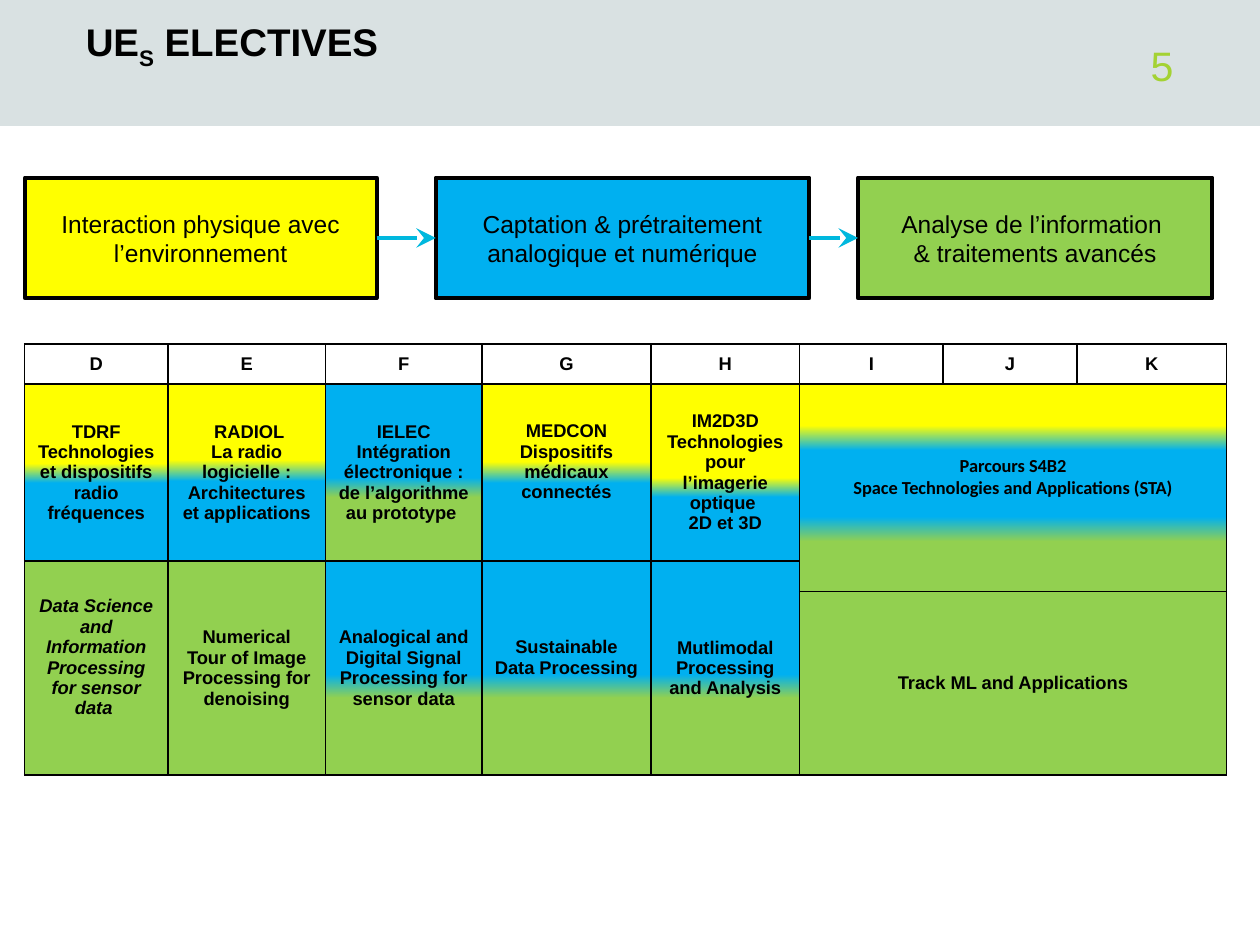
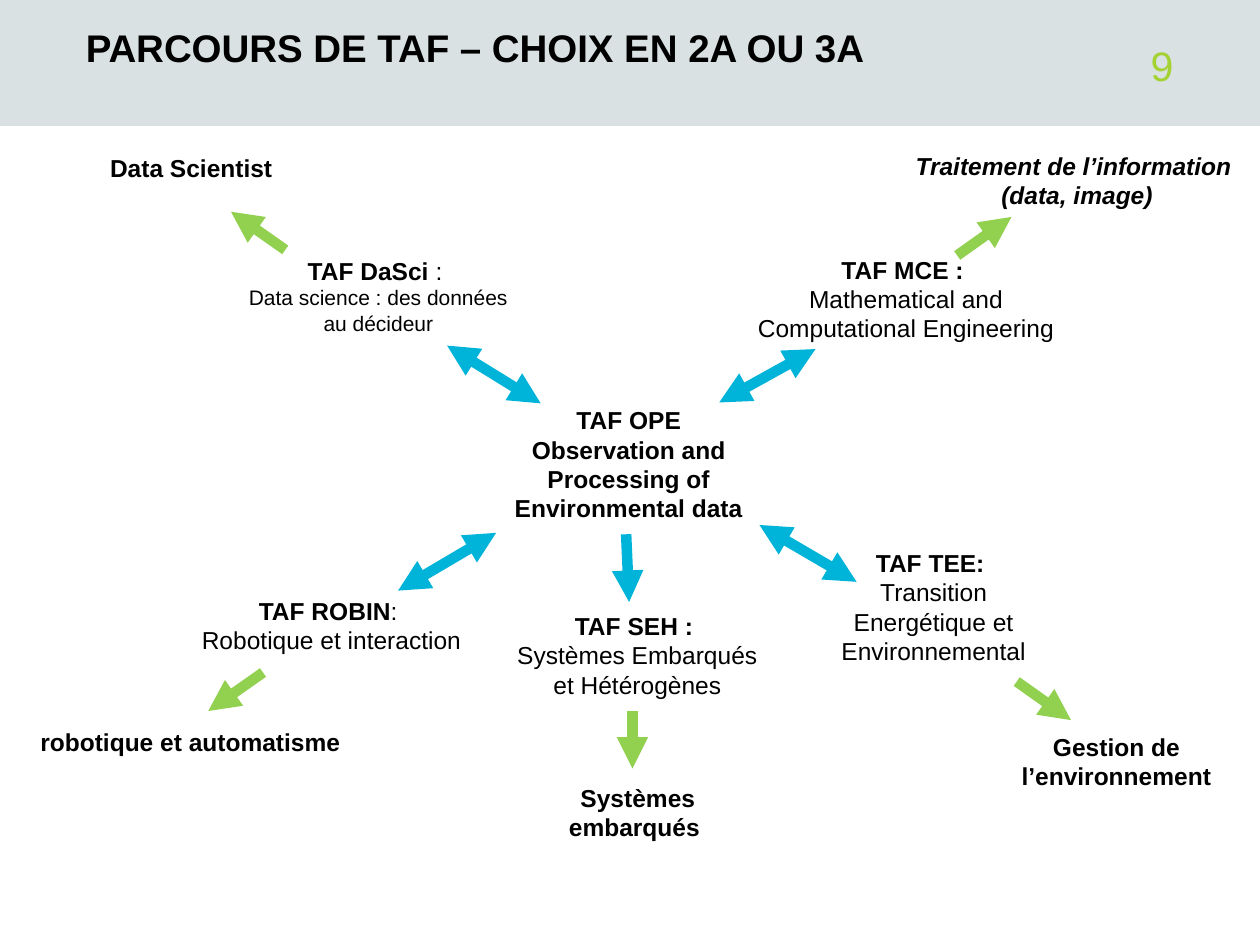
from dataclasses import dataclass
from itertools import pairwise

from lxml.etree import SubElement
from pptx import Presentation
from pptx.dml.color import RGBColor
from pptx.enum.shapes import MSO_CONNECTOR as Connector, MSO_SHAPE as Preset
from pptx.enum.text import MSO_ANCHOR as Anchor, MSO_AUTO_SIZE as AutoSize, PP_ALIGN as Align
from pptx.oxml.ns import qn
from pptx.util import Pt

# Shared colours
BLACK, WHITE, BAND, LIME = "000000", "FFFFFF", "D9E1E2", "A4D233"
YELLOW, BLUE, GREEN = "FFFF00", "00B0F0", "92D050"
FLOW_BLUE, LINK_BLUE = "00B8DE", "00B4D9"


@dataclass(frozen=True)
class Run:
    text: str
    bold: bool = False
    italic: bool = False
    size: float = 14
    face: str = "Arial"
    color: str = BLACK
    baseline: int = 0


Paragraphs = list[list[Run]]


@dataclass(frozen=True)
class Box:
    left: float
    top: float
    width: float
    height: float

    def points(self) -> list:
        return [Pt(value) for value in (self.left, self.top, self.width, self.height)]


@dataclass(frozen=True)
class Stage:
    box: Box
    fill: str
    lines: tuple


@dataclass(frozen=True)
class Course:
    """A table cell: its colours blend from top to bottom at the given edges."""
    row: int
    column: int
    lines: tuple
    colors: tuple = (GREEN,)
    edges: tuple = ()
    span: tuple = (1, 1)
    italic: bool = False
    face: str = "Arial"
    lift: float = 0


@dataclass(frozen=True)
class Label:
    box: Box
    paragraphs: Paragraphs
    wrap: bool = True
    align: Align = Align.CENTER


@dataclass(frozen=True)
class Arrow:
    start: tuple
    end: tuple
    color: str
    double: bool = False
    width: float = 6
    head: str = "triangle"
    head_size: str = "med"


def rgb(value: str) -> RGBColor:
    return RGBColor.from_string(value)


def assign(target, formats: dict) -> None:
    for name, value in formats.items():
        setattr(target, name, value)


def bold(text: str, italic: bool = False) -> Run:
    return Run(text, bold=True, italic=italic)


# Drawing functions
def write_text(frame, paragraphs: Paragraphs, align: Align) -> None:
    for index, runs in enumerate(paragraphs):
        paragraph = frame.add_paragraph() if index else frame.paragraphs[0]
        paragraph.alignment = align
        for item in runs:
            run = paragraph.add_run()
            run.text = item.text
            assign(run.font, {"name": item.face, "size": Pt(item.size),
                              "bold": item.bold, "italic": item.italic})
            run.font.color.rgb = rgb(item.color)
            if item.baseline:
                run.font._element.set("baseline", str(item.baseline * 1000))


def format_frame(frame, anchor: Anchor, **extra) -> None:
    margins = {f"margin_{side}": 0 for side in ("left", "top", "right", "bottom")}
    assign(frame, {"word_wrap": True, "auto_size": AutoSize.NONE,
                   "vertical_anchor": anchor, **margins, **extra})


def add_rectangle(slide, box: Box, fill: str, outline: float = 0):
    shape = slide.shapes.add_shape(Preset.RECTANGLE, *box.points())
    shape.shadow.inherit = False
    shape.fill.solid()
    shape.fill.fore_color.rgb = rgb(fill)
    if outline:
        shape.line.color.rgb = rgb(BLACK)
        shape.line.width = Pt(outline)
    else:
        shape.line.fill.background()
    return shape


def add_page(presentation, title: list[Run], number: int):
    slide = presentation.slides.add_slide(presentation.slide_layouts[5])
    heading = slide.shapes.title
    band = add_rectangle(slide, Box(0, 0, 720, 72), BAND)
    heading.element.addprevious(band.element)
    assign(heading, dict(zip(("left", "top", "width", "height"),
                             Box(49, 0, 552, 40.3).points())))
    format_frame(heading.text_frame, Anchor.BOTTOM)
    write_text(heading.text_frame, [title], Align.LEFT)
    frame = slide.shapes.add_textbox(*Box(619, 21, 51.5, 32).points()).text_frame
    format_frame(frame, Anchor.MIDDLE)
    write_text(frame, [[Run(str(number), size=23.5, color=LIME)]], Align.RIGHT)
    return slide


def add_arrow(slide, arrow: Arrow) -> None:
    ends = [Pt(value) for value in (*arrow.start, *arrow.end)]
    line = slide.shapes.add_connector(Connector.STRAIGHT, *ends)
    line.line.color.rgb = rgb(arrow.color)
    line.line.width = Pt(arrow.width)
    outline = line.line._get_or_add_ln()
    for tag in ["a:headEnd"] * arrow.double + ["a:tailEnd"]:
        SubElement(outline, qn(tag), type=arrow.head, w=arrow.head_size, len=arrow.head_size)
    SubElement(line.element.spPr, qn("a:effectLst"))


def add_label(slide, label: Label) -> None:
    frame = slide.shapes.add_textbox(*label.box.points()).text_frame
    assign(frame, {"word_wrap": label.wrap, "auto_size": AutoSize.SHAPE_TO_FIT_TEXT})
    write_text(frame, label.paragraphs, label.align)


def add_color(parent, color: str) -> None:
    SubElement(parent, qn("a:srgbClr"), val=color)


def paint_cell(cell, colors: tuple, edges: tuple) -> None:
    properties = cell._tc.get_or_add_tcPr()
    for side in "LRTB":
        border = SubElement(properties, qn(f"a:ln{side}"), w=str(Pt(1)))
        add_color(SubElement(border, qn("a:solidFill")), BLACK)
    if not edges:
        add_color(SubElement(properties, qn("a:solidFill")), colors[0])
        return
    stops = [(0, colors[0])]
    for (start, end), (upper, lower) in zip(edges, pairwise(colors)):
        stops += [(start, upper), (end, lower)]
    gradient = SubElement(properties, qn("a:gradFill"), rotWithShape="1")
    stop_list = SubElement(gradient, qn("a:gsLst"))
    for position, color in stops + [(100, colors[-1])]:
        add_color(SubElement(stop_list, qn("a:gs"), pos=str(position * 1000)), color)
    SubElement(gradient, qn("a:lin"), ang="5400000", scaled="0")


def add_course_table(slide, courses: list[Course]) -> None:
    widths = (82, 90, 89.5, 96.5, 85, 82, 76.5, 85.5)
    heights = (23, 101, 17.5, 105)
    box = Box(14, 196.5, sum(widths), sum(heights))
    table = slide.shapes.add_table(len(heights), len(widths), *box.points()).table
    assign(table, {"first_row": False, "horz_banding": False})
    for column, width in zip(table.columns, widths):
        column.width = Pt(width)
    for row, height in zip(table.rows, heights):
        row.height = Pt(height)
    for course in courses:
        rows, columns = course.span
        cell = table.cell(course.row, course.column)
        if course.span != (1, 1):
            cell.merge(table.cell(course.row + rows - 1, course.column + columns - 1))
        for row in range(course.row, course.row + rows):
            for column in range(course.column, course.column + columns):
                paint_cell(table.cell(row, column), course.colors, course.edges)
        assign(cell, {"vertical_anchor": Anchor.MIDDLE, "margin_bottom": Pt(3.6 + course.lift)})
        write_text(cell.text_frame,
                   [[Run(line, True, course.italic, 10.5, course.face)] for line in course.lines],
                   Align.CENTER)


# Slide 1: processing chain and elective courses
STAGES = [
    Stage(Box(14.2, 101.5, 201, 69), YELLOW, ("Interaction physique avec l’environnement",)),
    Stage(Box(249, 101.5, 213.5, 69), BLUE,
          ("Captation & prétraitement analogique et numérique",)),
    Stage(Box(490.3, 101.5, 202.5, 69), GREEN,
          ("Analyse de l’information ", "& traitements avancés")),
]
SKY, FIELD = (YELLOW, BLUE), (BLUE, GREEN)
LOW_EDGE = ((53, 64),)
COURSES = [Course(0, column, (letter,), (WHITE,)) for column, letter in enumerate("DEFGHIJK")] + [
    Course(1, 0, ("TDRF Technologies et dispositifs radio fréquences",), SKY, ((45, 56),)),
    Course(1, 1, (" RADIOL", "La radio logicielle : Architectures et applications "),
           SKY, ((43, 55),)),
    Course(1, 2, ("IELEC", "Intégration électronique : de l’algorithme au prototype "),
           FIELD, LOW_EDGE),
    Course(1, 3, ("MEDCON", "Dispositifs médicaux connectés"), SKY, ((44, 56),), lift=12),
    Course(1, 4, ("IM2D3D", "Technologies pour l’imagerie optique ", "2D et 3D"),
           SKY, LOW_EDGE),
    Course(1, 5, ("Parcours S4B2", "Space Technologies and Applications (STA)"),
           (YELLOW, BLUE, GREEN), ((20, 32), (64, 76)), (2, 3), face="Calibri", lift=12),
    Course(2, 0, ("Data Science and Information Processing for sensor data ",),
           span=(2, 1), italic=True, lift=12),
    Course(2, 1, ("Numerical Tour of Image Processing for denoising",), span=(2, 1)),
    Course(2, 2, ("Analogical and Digital Signal Processing for sensor data",),
           FIELD, LOW_EDGE, (2, 1)),
    Course(2, 3, ("Sustainable Data Processing",), FIELD, LOW_EDGE, (2, 1), lift=12),
    Course(2, 4, ("Mutlimodal Processing and Analysis",), FIELD, LOW_EDGE, (2, 1)),
    Course(3, 5, ("Track ML and Applications",), span=(1, 3)),
]

# Slide 2: programme map
LABELS = [
    Label(Box(277, 228, 164.5, 75),
          [[bold("TAF OPE")], [bold("Observation and Processing of Environmental data")]]),
    Label(Box(134.5, 142.5, 163.5, 53),
          [[bold("TAF DaSci "), Run(": ")],
           [Run("Data science : des données au décideur", size=12)]]),
    Label(Box(422, 142, 191.5, 58),
          [[bold("TAF MCE : ")], [Run("Mathematical and Computational Engineering")]]),
    Label(Box(94, 337, 191, 41),
          [[bold("TAF ROBIN"), Run(": ")], [Run("Robotique et interaction")]]),
    Label(Box(55.5, 83.8, 111.5, 24.5), [[bold("Data Scientist ")]], wrap=False),
    Label(Box(456.5, 309.5, 154, 75),
          [[bold("TAF TEE: ")], [Run("Transition Energétique et Environnemental")]]),
    Label(Box(507.5, 82.5, 216, 41),
          [[bold("Traitement de l’information ", True)], [bold("(data, image)", True)]]),
    Label(Box(286.5, 345.5, 155.5, 58),
          [[bold("TAF SEH : ")], [Run("Systèmes Embarqués et Hétérogènes")]]),
    Label(Box(289.5, 443.7, 150, 41), [[bold("Systèmes")], [bold("embarqués ")]]),
    Label(Box(16, 412, 191, 24.5), [[bold("robotique et automatisme")]], False, Align.LEFT),
    Label(Box(563, 414.5, 150, 41), [[bold("Gestion de l’environnement")]]),
]
ARROWS = [
    Arrow((309, 230.5), (255.5, 197.5), LINK_BLUE, True),
    Arrow((411, 230), (466, 199.5), LINK_BLUE, True),
    Arrow((489.5, 332.5), (434, 300), LINK_BLUE, True),
    Arrow((227.5, 337.5), (283.5, 304.5), LINK_BLUE, True),
    Arrow((357.8, 305.3), (359.5, 344), LINK_BLUE),
    Arrow((163, 142.8), (132, 121), GREEN),
    Arrow((547, 146), (578, 124), GREEN),
    Arrow((581, 389.5), (612, 411.5), GREEN),
    Arrow((150.3, 384.3), (119, 406.3), GREEN),
    Arrow((361.4, 406.3), (361.4, 439.2), GREEN),
]


def heading_run(text: str, baseline: int = 0) -> Run:
    return Run(text, bold=True, size=22, baseline=baseline)


def build_electives(presentation) -> None:
    title = [heading_run("UE"), heading_run("S", -25), heading_run(" ELECTIVES")]
    slide = add_page(presentation, title, 5)
    add_course_table(slide, COURSES)
    for stage in STAGES:
        frame = add_rectangle(slide, stage.box, stage.fill, 2.25).text_frame
        assign(frame, {"word_wrap": True, "vertical_anchor": Anchor.MIDDLE})
        write_text(frame, [[Run(line)] for line in stage.lines], Align.CENTER)
    for before, after in pairwise(stage.box for stage in STAGES):
        middle = before.top + before.height / 2
        add_arrow(slide, Arrow((before.left + before.width, middle), (after.left, middle),
                               FLOW_BLUE, width=2.25, head="stealth", head_size="lg"))


def build_programme_map(presentation) -> None:
    slide = add_page(presentation, [heading_run("PARCOURS DE TAF – CHOIX EN 2A OU 3A")], 9)
    for label in LABELS:
        add_label(slide, label)
    for arrow in ARROWS:
        add_arrow(slide, arrow)


def main() -> None:
    presentation = Presentation()
    assign(presentation, {"slide_width": Pt(720), "slide_height": Pt(540)})
    build_electives(presentation)
    build_programme_map(presentation)
    presentation.save("out.pptx")


if __name__ == "__main__":
    main()
